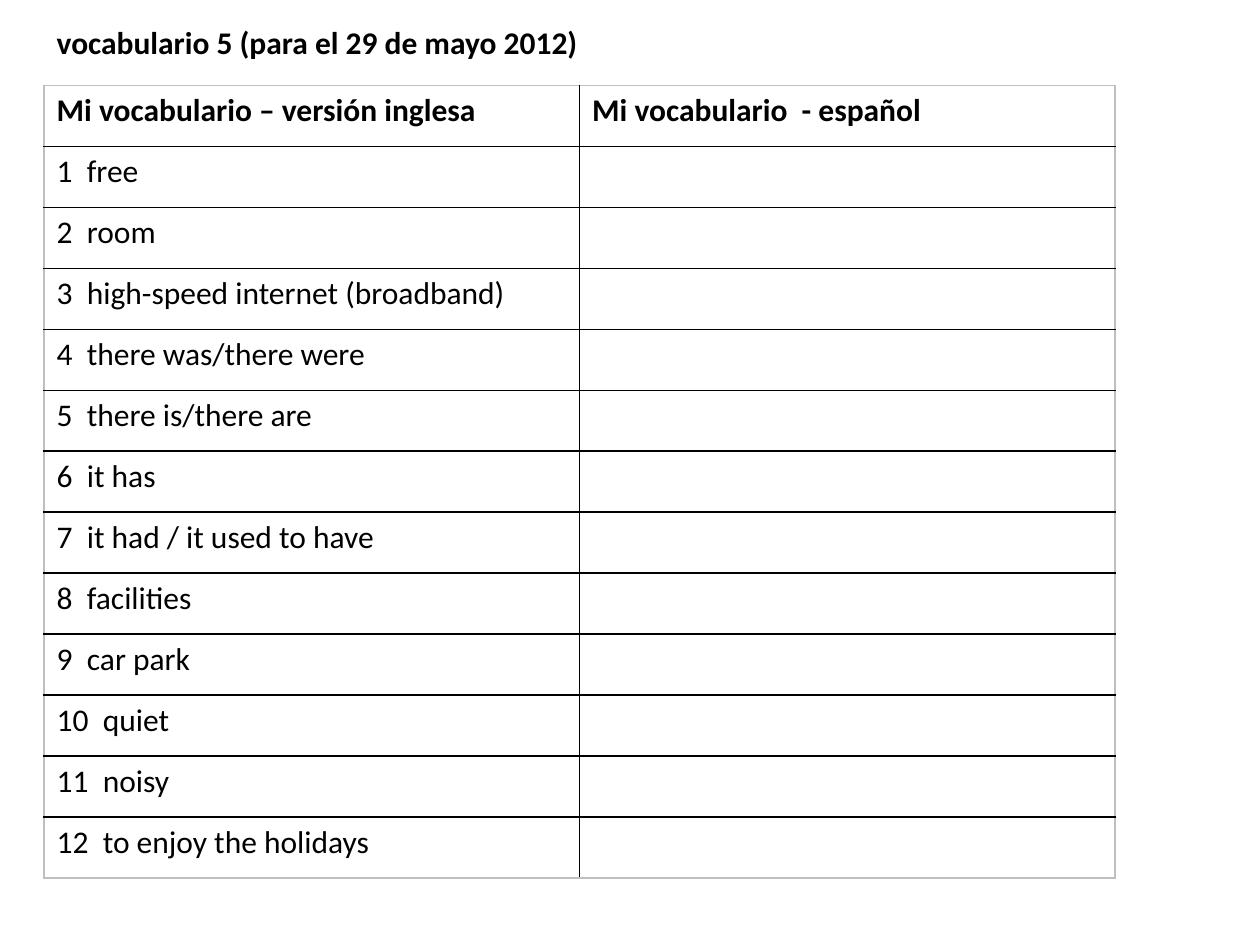
import pptx
import pptx.util
import pptx.dml.color
import pptx.enum.text
import pptx.oxml.ns
from lxml import etree

Pt = pptx.util.Pt
RGB = pptx.dml.color.RGBColor.from_string

TITLE = "vocabulario 5 (para el 29 de mayo 2012)"
HEADERS = ["Mi vocabulario – versión inglesa", "Mi vocabulario  - español"]
WORDS = [
    "free",
    "room",
    "high-speed internet (broadband)",
    "there was/there were",
    "there is/there are",
    "it has",
    "it had / it used to have",
    "facilities",
    "car park",
    "quiet",
    "noisy",
    "to enjoy the holidays",
]
COLORS = {"text": "000000", "inner": "000000", "outer": "BFBFBF", "cell": "FFFFFF"}
FONT, SIZE = "Calibri", 18
LEFT, TABLE_TOP = 25.2, 48.8
COL_W, ROW_H = 306, 34.86


def format_text(p, bold):
    p.font.name = FONT
    p.font.size = Pt(SIZE)
    p.font.bold = bold
    p.font.color.rgb = RGB(COLORS["text"])


def add_border(cell, side, color):
    qn = pptx.oxml.ns.qn
    ln = etree.SubElement(cell._tc.get_or_add_tcPr(), qn(f"a:ln{side}"), w=str(Pt(1)))
    fill = etree.SubElement(ln, qn("a:solidFill"))
    etree.SubElement(fill, qn("a:srgbClr"), val=color)


def add_title(s):
    title = s.shapes.title
    title.left, title.top, title.width, title.height = Pt(LEFT), Pt(9.4), Pt(686), Pt(29)
    tf = title.text_frame
    tf.text = TITLE
    tf.word_wrap = True
    tf.auto_size = pptx.enum.text.MSO_AUTO_SIZE.NONE
    tf.vertical_anchor = pptx.enum.text.MSO_ANCHOR.TOP
    p = tf.paragraphs[0]
    p.alignment = pptx.enum.text.PP_ALIGN.LEFT
    format_text(p, True)


def add_vocabulary(s):
    rows = [HEADERS] + [[f"{n}  {word}", ""] for n, word in enumerate(WORDS, 1)]
    n_rows, n_cols = len(rows), len(HEADERS)
    table = s.shapes.add_table(
        n_rows, n_cols, Pt(LEFT), Pt(TABLE_TOP), Pt(COL_W * n_cols), Pt(ROW_H * n_rows)
    ).table
    table.first_row = table.horz_banding = False
    for column in table.columns:
        column.width = Pt(COL_W)
    for i, texts in enumerate(rows):
        table.rows[i].height = Pt(ROW_H)
        for j, text in enumerate(texts):
            cell = table.cell(i, j)
            cell.text = text
            format_text(cell.text_frame.paragraphs[0], i == 0)
            edges = {"L": j == 0, "R": j == n_cols - 1, "T": i == 0, "B": i == n_rows - 1}
            for side, is_outer in edges.items():
                add_border(cell, side, COLORS["outer" if is_outer else "inner"])
            cell.fill.solid()
            cell.fill.fore_color.rgb = RGB(COLORS["cell"])


def main():
    prs = pptx.Presentation()
    prs.slide_width, prs.slide_height = Pt(720), Pt(540)
    s = prs.slides.add_slide(prs.slide_layouts[5])
    add_title(s)
    add_vocabulary(s)
    prs.save("out.pptx")


if __name__ == "__main__":
    main()
